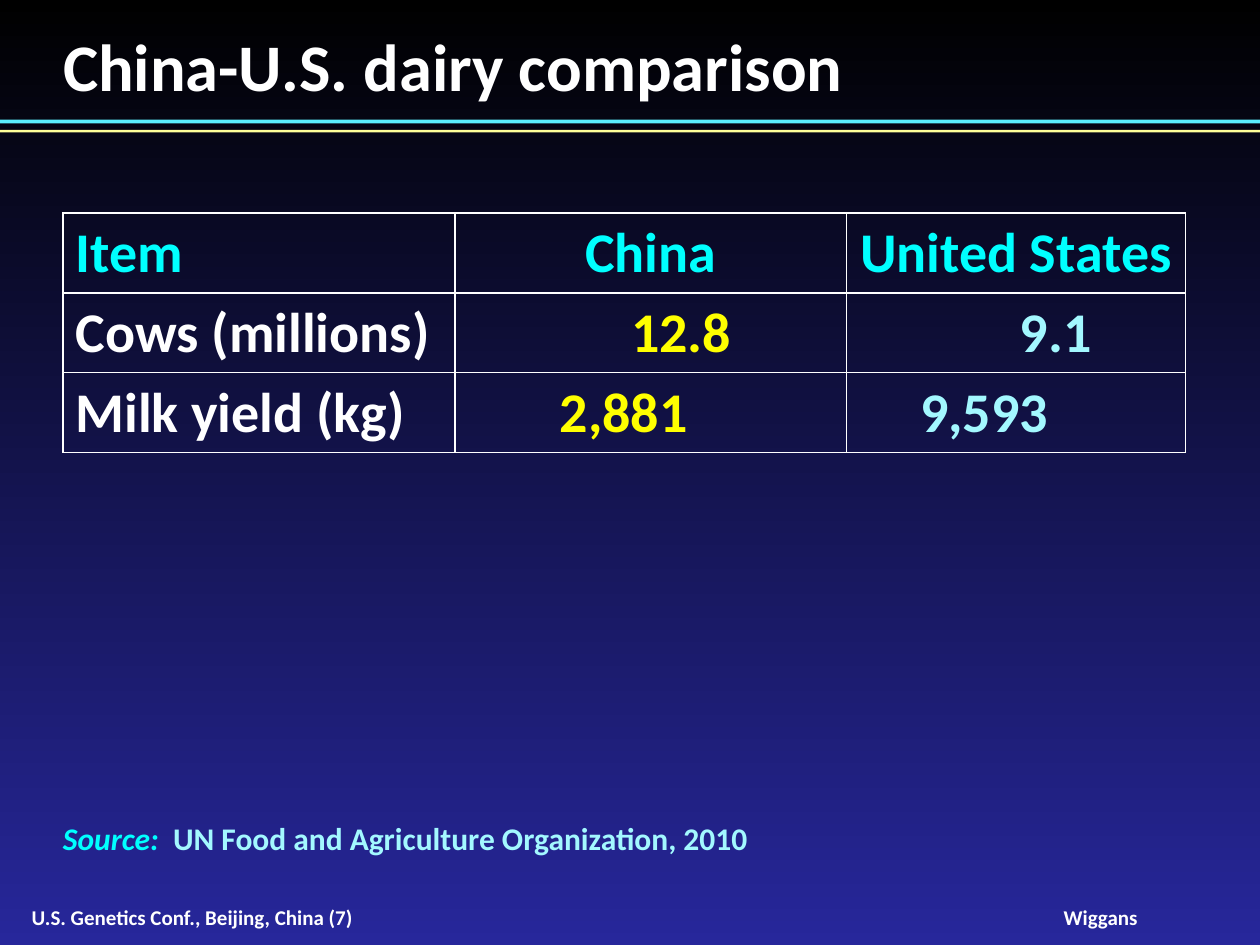
from lxml import etree
from pptx import Presentation
from pptx.dml.color import RGBColor
from pptx.enum.shapes import MSO_SHAPE
from pptx.enum.text import MSO_ANCHOR, PP_ALIGN
from pptx.oxml.ns import qn
from pptx.util import Inches, Pt

RECT = MSO_SHAPE.RECTANGLE
TOP, MIDDLE, BOTTOM = MSO_ANCHOR.TOP, MSO_ANCHOR.MIDDLE, MSO_ANCHOR.BOTTOM
LEFT, CENTER = PP_ALIGN.LEFT, PP_ALIGN.CENTER
WHITE, CYAN, YELLOW, PALE = "FFFFFF", "00FFFF", "FFFF00", "A3F8FF"
ROWS = [
    ("Item", "China", "United States"),
    ("Cows (millions)", "12.8", "9.1"),
    ("Milk yield (kg)", "2,881", "9,593"),
]
WIDTHS = (3.11, 3.11, 2.69)
TABS = (None, 1.75, 1.5)
INKS = (WHITE, YELLOW, PALE)


def paint(color, code):
    color.rgb = RGBColor.from_string(code)


def write(para, text, size=18, color=WHITE, italic=False):
    run = para.add_run()
    run.text = text
    font = run.font
    font.name, font.size = "Calibri", Pt(size)
    font.bold, font.italic = True, italic
    paint(font.color, color)


def frame(shape, anchor=TOP, align=LEFT, wrap=True):
    body = shape.text_frame
    body.word_wrap = wrap
    body.vertical_anchor = anchor
    body.margin_left = body.margin_right = 0
    body.margin_top = body.margin_bottom = 0
    para = body.paragraphs[0]
    para.alignment = align
    return para


def add_box(slide, x, y, w, h, **style):
    box = slide.shapes.add_textbox(Inches(x), Inches(y), Inches(w), Inches(h))
    return frame(box, **style)


def add_rule(slide, y, h, code):
    bar = slide.shapes.add_shape(RECT, 0, Inches(y), Inches(10), Inches(h))
    bar.shadow.inherit = False
    bar.fill.solid()
    paint(bar.fill.fore_color, code)
    bar.line.fill.background()


def add_stop(para, place):
    tabs = etree.SubElement(para._p.get_or_add_pPr(), qn("a:tabLst"))
    etree.SubElement(tabs, qn("a:tab"), pos=str(Inches(place)), algn="dec")


def add_grid(slide):
    shape = slide.shapes.add_table(
        3, 3, Inches(0.5), Inches(1.69), Inches(sum(WIDTHS)), Inches(1.9))
    table = shape.table
    table.first_row = table.horz_banding = False
    for col, width in zip(table.columns, WIDTHS):
        col.width = Inches(width)
    for r, row in enumerate(ROWS):
        for c, text in enumerate(row):
            cell = table.cell(r, c)
            cell.fill.background()
            cell.vertical_anchor = BOTTOM
            para = cell.text_frame.paragraphs[0]
            if r and c:
                add_stop(para, TABS[c])
                text = "\t" + text
            elif c:
                para.alignment = CENTER
            write(para, text, size=32, color=INKS[c] if r else CYAN)


def add_title(slide, text):
    title = slide.shapes.title
    title.left, title.top = Inches(0.5), Inches(0.2)
    title.width, title.height = Inches(9), Inches(0.64)
    write(frame(title), text, size=38)


def set_back(slide):
    fill = slide.background.fill
    fill.gradient()
    fill.gradient_angle = 270
    for stop, code in zip(fill.gradient_stops, ("000000", "27279B")):
        paint(stop.color, code)


def main():
    deck = Presentation()
    deck.slide_width, deck.slide_height = Inches(10), Inches(7.5)
    slide = deck.slides.add_slide(deck.slide_layouts[5])
    set_back(slide)
    event = add_box(slide, 0.25, 7.18, 5.22, 0.2, anchor=MIDDLE)
    write(event, "U.S. Genetics Conf., Beijing, China (7)", size=12)
    name = add_box(slide, 8.44, 7.18, 0.59, 0.2,
                   anchor=MIDDLE, align=CENTER, wrap=False)
    write(name, "Wiggans", size=12)
    add_rule(slide, 0.95, 0.03, "5BEFFF")
    add_rule(slide, 1.03, 0.02, "FFFF99")
    add_title(slide, "China-U.S. dairy comparison")
    add_grid(slide)
    source = add_box(slide, 0.5, 6.5, 7.17, 0.3)
    write(source, "Source:  ", color=CYAN, italic=True)
    write(source, "UN Food and Agriculture Organization, 2010", color=PALE)
    deck.save("out.pptx")


if __name__ == "__main__":
    main()
